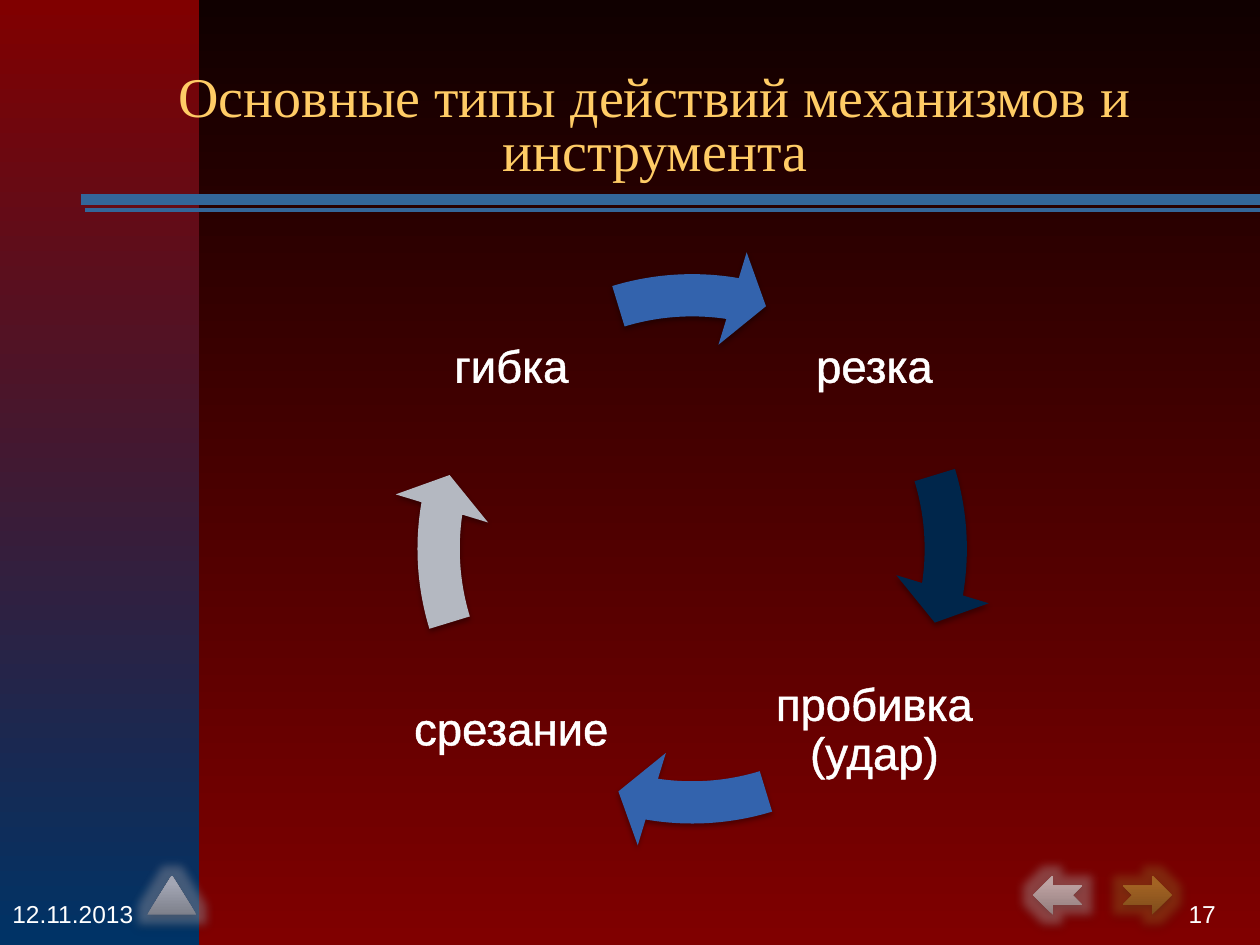
"""Build a slide showing the cycle of machine and tool actions."""
from pptx import Presentation
from pptx.dml.color import RGBColor
from pptx.enum.shapes import MSO_CONNECTOR, MSO_SHAPE
from pptx.enum.text import MSO_ANCHOR, PP_ALIGN
from pptx.oxml import parse_xml
from pptx.oxml.ns import nsdecls, qn
from pptx.util import Cm, Pt

STRAIGHT = MSO_CONNECTOR.STRAIGHT
RECTANGLE, RING_ARROW = MSO_SHAPE.RECTANGLE, MSO_SHAPE.CIRCULAR_ARROW
NOTCHED, TRIANGLE = MSO_SHAPE.NOTCHED_RIGHT_ARROW, MSO_SHAPE.FLOWCHART_EXTRACT
MIDDLE, BOTTOM = MSO_ANCHOR.MIDDLE, MSO_ANCHOR.BOTTOM
LEFT, CENTER, RIGHT = PP_ALIGN.LEFT, PP_ALIGN.CENTER, PP_ALIGN.RIGHT
NAMESPACE = nsdecls("a")
SHADOW = (f'<a:outerShdw {NAMESPACE} blurRad="40000" dist="23000" dir="5400000" rotWithShape="0">'
          '<a:srgbClr val="000000"><a:alpha val="35000"/></a:srgbClr></a:outerShdw>')
TEXT_SHADOW = (f'<a:effectLst {NAMESPACE}><a:outerShdw blurRad="38100" dist="38100" dir="2700000">'
               '<a:srgbClr val="000000"/></a:outerShdw></a:effectLst>')
OUTLINE = (f'<a:ln {NAMESPACE} w="18415"><a:solidFill><a:srgbClr val="FFFFFF"/>'
           '</a:solidFill></a:ln>')


def paint(fill, start, end=None, angle=270, reach=1):
    if end is None:
        fill.solid()
        fill.fore_color.rgb = RGBColor.from_string(start)
        return
    fill.gradient()
    fill.gradient_angle = angle
    for stop, color, position in zip(fill.gradient_stops, (start, end), (0, reach)):
        stop.color.rgb = RGBColor.from_string(color)
        stop.position = position


def add_text(text, left, top, width, height, size=14, font="Arial", color="FFFFFF", align=LEFT,
             anchor=MIDDLE, spacing=1, inset=(0.25, 0.13), outlined=False, shadowed=False):
    box = page.shapes.add_textbox(Cm(left), Cm(top), Cm(width), Cm(height))
    frame = box.text_frame
    frame.word_wrap = True
    frame.vertical_anchor = anchor
    frame.margin_left = frame.margin_right = Cm(inset[0])
    frame.margin_top = frame.margin_bottom = Cm(inset[1])
    para = frame.paragraphs[0]
    para.alignment = align
    para.line_spacing = spacing
    span = para.add_run()
    span.text = text
    span.font.size = Pt(size)
    paint(span.font.fill, color)
    properties = span.font._element
    if outlined:
        properties.insert(0, parse_xml(OUTLINE))
    if shadowed:
        properties.append(parse_xml(TEXT_SHADOW))
    span.font.name = font


deck = Presentation()
deck.slide_width, deck.slide_height = Cm(25.4), Cm(19.05)
page = deck.slides.add_slide(deck.slide_layouts[6])
paint(page.background.fill, "100000", "800000")

band = page.shapes.add_shape(RECTANGLE, 0, 0, Cm(4.01), Cm(19.05))
paint(band.fill, "800000", "003366")
band.line.fill.background()
band.shadow.inherit = False

for left, top, weight in ((1.71, 4.23, 2), (1.63, 4.02, 6)):
    rule = page.shapes.add_connector(STRAIGHT, Cm(left), Cm(top), Cm(25.4), Cm(top))
    paint(rule.line.fill, "336699")
    rule.line.width = Pt(weight)
    rule._element.spPr.append(parse_xml(f"<a:effectLst {NAMESPACE}/>"))

add_text("Основные типы действий механизмов и инструмента", 1.65, 0.74, 23.11, 3.07, size=32,
         font="Times New Roman", color="FFCC66", align=CENTER, anchor=BOTTOM, spacing=0.8,
         shadowed=True)

shaded = []
steps = (
    ("резка", 15.47, 5.26, "00264B"),
    ("пробивка (удар)", 15.47, 12.57, "3363AD"),
    ("срезание", 8.15, 12.57, "B4B8C1"),
    ("гибка", 8.15, 5.26, "3363AD"),
)
for index, (label, left, top, color) in enumerate(steps):
    add_text(label, left, top, 4.32, 4.32, size=26, align=CENTER, spacing=0.9,
             inset=(0.1, 0.1), outlined=True)
    arrow = page.shapes.add_shape(RING_ARROW, Cm(7.87), Cm(4.98), Cm(12.17), Cm(12.17))
    turn = 54 * index
    for place, value in enumerate((0.07, 4.65, 5.5 + turn, (205.85 + turn) % 216, 0.08)):
        arrow.adjustments[place] = value
    paint(arrow.fill, color)
    shaded.append((arrow, None))

add_text("17", 19.48, 17.78, 5.28, 1.27, align=RIGHT)
add_text("12.11.2013", 0, 17.78, 5.28, 1.27)

buttons = (
    (NOTCHED, 20.83, True, "927C7C", "BDA2A2"),
    (TRIANGLE, 2.97, False, "7D808B", "A3A6B4"),
    (NOTCHED, 22.63, False, "7E4C1B", "A36323"),
)
for kind, left, flipped, start, end in buttons:
    button = page.shapes.add_shape(kind, Cm(left), Cm(17.65), Cm(0.99), Cm(0.79))
    if flipped:
        button._element.spPr.get_or_add_xfrm().set("flipH", "1")
    paint(button.fill, start, end, angle=90, reach=0.8)
    shaded.append((button, end))

for shape, glow in shaded:
    shape.line.fill.background()
    shape.shadow.inherit = False
    effects = shape._element.spPr.find(qn("a:effectLst"))
    if glow:
        effects.append(parse_xml(f'<a:glow {NAMESPACE} rad="139700"><a:srgbClr val="{glow}">'
                                 '<a:alpha val="40000"/></a:srgbClr></a:glow>'))
    effects.append(parse_xml(SHADOW))

deck.save("out.pptx")
